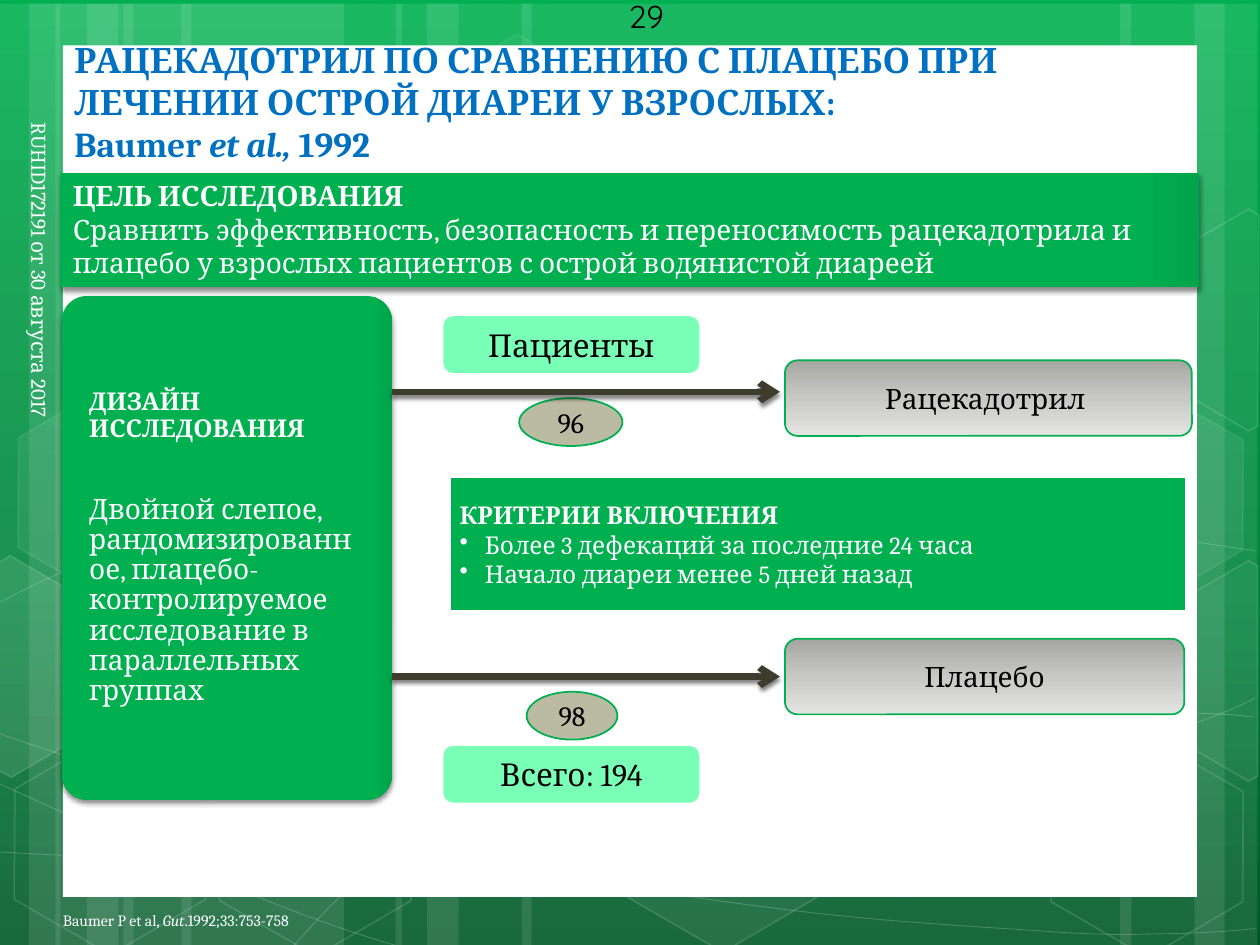
"""Build the slide on the racecadotril versus placebo trial in adults."""
from copy import deepcopy

from lxml import etree
from pptx import Presentation
from pptx.dml.color import RGBColor
from pptx.enum.shapes import MSO_CONNECTOR, MSO_SHAPE
from pptx.enum.text import MSO_ANCHOR, MSO_AUTO_SIZE, PP_ALIGN
from pptx.oxml.ns import qn
from pptx.util import Inches, Pt

RECTANGLE, ROUNDED = MSO_SHAPE.RECTANGLE, MSO_SHAPE.ROUNDED_RECTANGLE
OVAL, HEXAGON = MSO_SHAPE.OVAL, MSO_SHAPE.HEXAGON
STRAIGHT = MSO_CONNECTOR.STRAIGHT
TOP, MIDDLE, BOTTOM = MSO_ANCHOR.TOP, MSO_ANCHOR.MIDDLE, MSO_ANCHOR.BOTTOM
LEFT, CENTER = PP_ALIGN.LEFT, PP_ALIGN.CENTER
COLORS = {
    "green": "00B050", "mid_green": "00843C", "dark_green": "005828",
    "edge_green": "00A44B", "mint": "79FFB6", "khaki": "BBBAA2",
    "gray": "A5A5A1", "mid_gray": "C8C8C6", "light_gray": "E4E4E3",
    "arrow": "3E3D2D", "blue": "0070C0", "white": "FFFFFF", "black": "000000",
}
RGB = {name: RGBColor.from_string(value) for name, value in COLORS.items()}
PANEL_STOPS = [(0, "green"), (0.94, "green"), (1, "edge_green")]
GROUP_STOPS = [(0, "gray"), (0.5, "mid_gray"), (1, "light_gray")]
PAGE_STOPS = [(0, "green"), (0.62, "mid_green"), (1, "dark_green")]


def paint_gradient(fill, element, stops, angle):
    """Fill with a linear gradient of three stops."""
    fill.gradient()
    fill.gradient_angle = angle
    stop_list = element.find(".//" + qn("a:gsLst"))
    stop_list.append(deepcopy(stop_list[-1]))
    for stop, (position, color) in zip(fill.gradient_stops, stops):
        stop.position = position
        stop.color.rgb = RGB[color]


def write(shape, paragraphs, size, color, anchor=MIDDLE, alignment=LEFT,
          margins=(0.1, 0.05), font_name="Cambria"):
    """Write paragraphs given as (bold, run, italic run, run)."""
    frame = shape.text_frame
    frame.word_wrap = True
    frame.auto_size = MSO_AUTO_SIZE.NONE
    frame.vertical_anchor = anchor
    frame.margin_left = frame.margin_right = Inches(margins[0])
    frame.margin_top = frame.margin_bottom = Inches(margins[1])
    for number, (bold, *runs) in enumerate(paragraphs):
        paragraph = frame.add_paragraph() if number else frame.paragraphs[0]
        paragraph.alignment = alignment
        paragraph.font.name = font_name
        paragraph.font.size = Pt(size)
        paragraph.font.bold = bold
        paragraph.font.color.rgb = RGB[color]
        for index, text in enumerate(runs):
            run = paragraph.add_run()
            run.text = text
            if index % 2:
                run.font.italic = True
    return frame


presentation = Presentation()
presentation.slide_width = Inches(10)
presentation.slide_height = Inches(7.5)
layout = presentation.slide_layouts[5]
slide = presentation.slides.add_slide(layout)
shapes = slide.shapes
paint_gradient(slide.background.fill, slide.element, PAGE_STOPS, 270)

decorations = []
strips = [(0.98, 1.75), (-0.02, 0.5), (0.23, 0.83), (1.44, 1.75), (0.44, 0.5),
          (0.69, 0.83), (7.23, 1.75), (9.48, 0.5), (8.89, 0.83), (4.14, 3.09),
          (3.14, 0.5), (3.39, 0.83)]
for left, width in strips:
    strip = shapes.add_shape(RECTANGLE, Inches(left), Inches(0.03), Inches(width), Inches(7.5))
    decorations.append((strip, 10, 0, 0))

curves = [
    [(-0.04, 6.76), (0.5, 6.79), (1.04, 6.82), (1.79, 6.81), (2.54, 6.8), (3.47, 6.78),
     (4.47, 6.68), (5.47, 6.58), (6.89, 6.39), (7.81, 6.2), (8.72, 6.01), (9.66, 5.71),
     (9.96, 5.54)],
    [(-0.04, 4.8), (0.25, 4.65), (0.54, 4.49), (1.11, 4.34), (1.67, 4.19), (2.48, 3.98),
     (3.36, 3.9), (4.25, 3.83), (5.33, 3.82), (6.43, 3.9), (7.53, 3.98), (9.36, 4.29),
     (9.96, 4.37)],
    [(-0.05, 6.2), (1.16, 6.75), (2.36, 7.3), (3.24, 7.53)],
    [(-0.04, 5.81), (0.28, 5.92), (0.59, 6.03), (1.17, 6.19), (1.75, 6.35), (2.62, 6.59),
     (3.46, 6.76), (4.29, 6.93), (5.34, 7.11), (6.17, 7.21), (7, 7.32), (7.89, 7.36),
     (8.42, 7.4), (8.95, 7.43), (9.08, 7.41), (9.34, 7.41), (9.6, 7.4), (9.78, 7.39),
     (9.96, 7.37)],
    [(2.31, 7.53), (2.49, 7.33), (2.67, 7.12), (2.91, 6.94), (3.15, 6.76), (3.49, 6.56),
     (3.77, 6.42), (4.05, 6.28), (4.22, 6.22), (4.59, 6.12), (4.95, 6.02), (5.62, 5.88),
     (5.98, 5.81), (6.33, 5.74), (6.38, 5.75), (6.69, 5.72), (7, 5.69), (7.49, 5.67),
     (7.83, 5.66), (8.18, 5.64), (8.75, 5.66), (8.75, 5.66), (8.97, 5.66), (9.2, 5.66),
     (9.42, 5.66), (9.6, 5.66), (9.77, 5.67), (9.95, 5.69)],
]
for controls in curves:
    first, *others = [(Inches(x), Inches(y)) for x, y in controls]
    builder = shapes.build_freeform(*first)
    builder.add_line_segments(others, close=False)
    curve = builder.convert_to_shape()
    outline = curve.element.find(".//" + qn("a:path"))
    lines = outline.findall(qn("a:lnTo"))
    for start in range(0, len(lines), 3):
        bezier = etree.SubElement(outline, qn("a:cubicBezTo"))
        for line in lines[start:start + 3]:
            bezier.append(line[0])
            outline.remove(line)
    decorations.append((curve, 0, 0.5, 20))

hexagons = [(3.23, 0.39, 4, 8), (4.86, 5.92, 6, 12), (0, 5.94, 0, 12), (0.03, 3.15, 7, 8),
            (1.63, 5.95, 0, 12), (8.23, 5.96, 0, 12), (8.23, 3.17, 7, 8)]
for left, top, fill_alpha, line_alpha in hexagons:
    hexagon = shapes.add_shape(HEXAGON, Inches(left), Inches(top), Inches(1.75), Inches(1.52))
    hexagon.rotation = 30
    hexagon.adjustments[0] = 0.285
    decorations.append((hexagon, fill_alpha, 1, line_alpha))

cut_hexagons = [
    ([(-0.03, 4.48), (0.08, 4.41), (0.85, 4.86), (0.84, 5.73), (0.09, 6.17), (-0.02, 6.11)], 10),
    ([(9.15, 4.89), (9.91, 4.45), (9.98, 4.49), (9.98, 6.16), (9.91, 6.2), (9.15, 5.76)], 4),
    ([(9.15, 2.1), (9.91, 1.66), (9.99, 1.71), (9.98, 3.38), (9.91, 3.42), (9.15, 2.98)], 0),
]
for corners, fill_alpha in cut_hexagons:
    first, *others = [(Inches(x), Inches(y)) for x, y in corners]
    builder = shapes.build_freeform(*first)
    builder.add_line_segments(others)
    decorations.append((builder.convert_to_shape(), fill_alpha, 1, 12))
page = shapes.add_shape(RECTANGLE, Inches(0.5), Inches(0.36), Inches(9), Inches(6.76))
decorations.append((page, 100, 0, 0))

for placeholder in list(layout.placeholders)[1:]:
    placeholder.element.getparent().remove(placeholder.element)
layout_tree = layout.placeholders[0].element.getparent()
for shape, fill_alpha, line_width, line_alpha in decorations:
    shape.shadow.inherit = False
    for fill, alpha, parent in ((shape.fill, fill_alpha, "p:spPr"),
                                (shape.line.fill, line_alpha, "p:spPr/a:ln")):
        if not alpha:
            fill.background()
            continue
        fill.solid()
        fill.fore_color.rgb = RGB["white"]
        steps = [qn(name) for name in (parent + "/a:solidFill/a:srgbClr").split("/")]
        color = shape.element.find("/".join(steps))
        etree.SubElement(color, qn("a:alpha"), val=str(alpha * 1000))
    if line_width:
        shape.line.width = Pt(line_width)
    layout_tree.append(shape.element)

blocks = {}
block_rows = [
    ("design", ROUNDED, 0.49, 2.35, 2.62, 4, PANEL_STOPS, None, 0),
    ("drug", ROUNDED, 6.23, 2.86, 3.23, 0.6, GROUP_STOPS, "green", 1),
    ("patients", ROUNDED, 3.52, 2.51, 2.03, 0.45, "mint", None, 0),
    ("drug_count", OVAL, 4.12, 3.16, 0.82, 0.38, "khaki", "green", 1),
    ("placebo_count", OVAL, 4.18, 5.49, 0.72, 0.38, "khaki", "green", 1),
    ("placebo", ROUNDED, 6.23, 5.07, 3.17, 0.6, GROUP_STOPS, "green", 1),
    ("criteria", RECTANGLE, 3.55, 3.77, 5.88, 1.1, "green", "white", 3.75),
    ("aim", RECTANGLE, 0.48, 1.37, 9.04, 0.91, PANEL_STOPS, None, 0),
    ("total", ROUNDED, 3.52, 5.92, 2.03, 0.45, "mint", None, 0),
]
for name, kind, left, top, width, height, fill, line, line_width in block_rows:
    block = shapes.add_shape(kind, Inches(left), Inches(top), Inches(width), Inches(height))
    block.shadow.inherit = False
    if isinstance(fill, str):
        block.fill.solid()
        block.fill.fore_color.rgb = RGB[fill]
    else:
        paint_gradient(block.fill, block.element, fill, 270 if fill is GROUP_STOPS else 0)
    if line:
        block.line.color.rgb = RGB[line]
        block.line.width = Pt(line_width)
    else:
        block.line.fill.background()
    blocks[name] = block
blocks["design"].adjustments[0] = 0.076

labels = [("drug", "Рацекадотрил ", 16), ("placebo", "Плацебо", 16), ("drug_count", "96", 16),
          ("placebo_count", "98", 16), ("patients", "Пациенты", 18), ("total", "Всего: 194", 18)]
for name, text, size in labels:
    write(blocks[name], [(False, text)], size, "black", alignment=CENTER, margins=(0, 0))

design = write(blocks["design"], [
    (True, "ДИЗАЙН ИССЛЕДОВАНИЯ"),
    (False, "Двойной слепое, рандомизированное, плацебо-контролируемое исследование "
            "в параллельных группах")], 16, "white", margins=(0.16, 0.18))
design.paragraphs[0].font.size = Pt(14)
design.paragraphs[0].space_after = Pt(30)
for paragraph in design.paragraphs:
    paragraph.line_spacing = 0.9

criteria = write(blocks["criteria"], [
    (True, "КРИТЕРИИ ВКЛЮЧЕНИЯ"), (False, "Более 3 дефекаций за последние 24 часа"),
    (False, "Начало диареи менее 5 дней назад")], 14, "white")
for paragraph in criteria.paragraphs[1:]:
    properties = paragraph._p.get_or_add_pPr()
    properties.set("marL", str(Inches(0.2)))
    properties.set("indent", str(-Inches(0.2)))
    properties.insert(0, etree.Element(qn("a:buChar"), char="•"))

write(blocks["aim"], [
    (True, "ЦЕЛЬ ИССЛЕДОВАНИЯ"),
    (False, "Сравнить эффективность, безопасность и переносимость рацекадотрила и плацебо "
            "у взрослых пациентов с острой водянистой диареей")], 16, "white", TOP)

shadowed = [(blocks["design"], 45, 3), (blocks["aim"], 45, 3)]
for y in (3.11, 5.37):
    arrow = shapes.add_connector(STRAIGHT, Inches(3.11), Inches(y), Inches(6.19), Inches(y))
    arrow.line.color.rgb = RGB["arrow"]
    arrow.line.width = Pt(3.75)
    properties = arrow.element.spPr
    etree.SubElement(properties.find(qn("a:ln")), qn("a:tailEnd"), type="arrow")
    etree.SubElement(properties, qn("a:effectLst"))
    shadowed.append((arrow, 50, 2.5))
for shape, alpha, blur in shadowed:
    effects = shape.element.spPr.find(qn("a:effectLst"))
    shadow = etree.SubElement(effects, qn("a:outerShdw"), blurRad=str(Pt(blur)),
                              dist=str(Pt(2)), dir="5400000", rotWithShape="0")
    color = etree.SubElement(shadow, qn("a:srgbClr"), val=COLORS["black"])
    etree.SubElement(color, qn("a:alpha"), val=str(alpha * 1000))

title = shapes.title
title.left, title.top, title.width, title.height = map(Inches, (0.49, 0.35, 8.43, 1.01))
write(title, [
    (True, "РАЦЕКАДОТРИЛ ПО СРАВНЕНИЮ С ПЛАЦЕБО ПРИ ЛЕЧЕНИИ ОСТРОЙ ДИАРЕИ У ВЗРОСЛЫХ:"),
    (True, "Baumer ", "et al., ", "1992")], 20, "blue", BOTTOM)
title.element.getparent().append(title.element)

notes = [
    (0.5, 7.23, 2.1, 0.15, 0, ("Baumer P et al, ", "Gut", ".1992;33:753-758"), 9, "white",
     BOTTOM, (0, 0), "Cambria"),
    (4.89, -0.07, 1.46, 0.4, 0, ("29",), 18, "black", TOP, (0.1, 0.05), "Quicksand"),
    (-2.16, 3.2, 4.95, 0.3, 90, ("RUHID172191 от 30 августа 2017",), 12, "white", TOP,
     (0.1, 0.05), "Cambria"),
]
for left, top, width, height, rotation, runs, size, color, anchor, margins, font_name in notes:
    note = shapes.add_textbox(Inches(left), Inches(top), Inches(width), Inches(height))
    note.rotation = rotation
    write(note, [(False, *runs)], size, color, anchor, LEFT, margins, font_name)

presentation.save("out.pptx")
